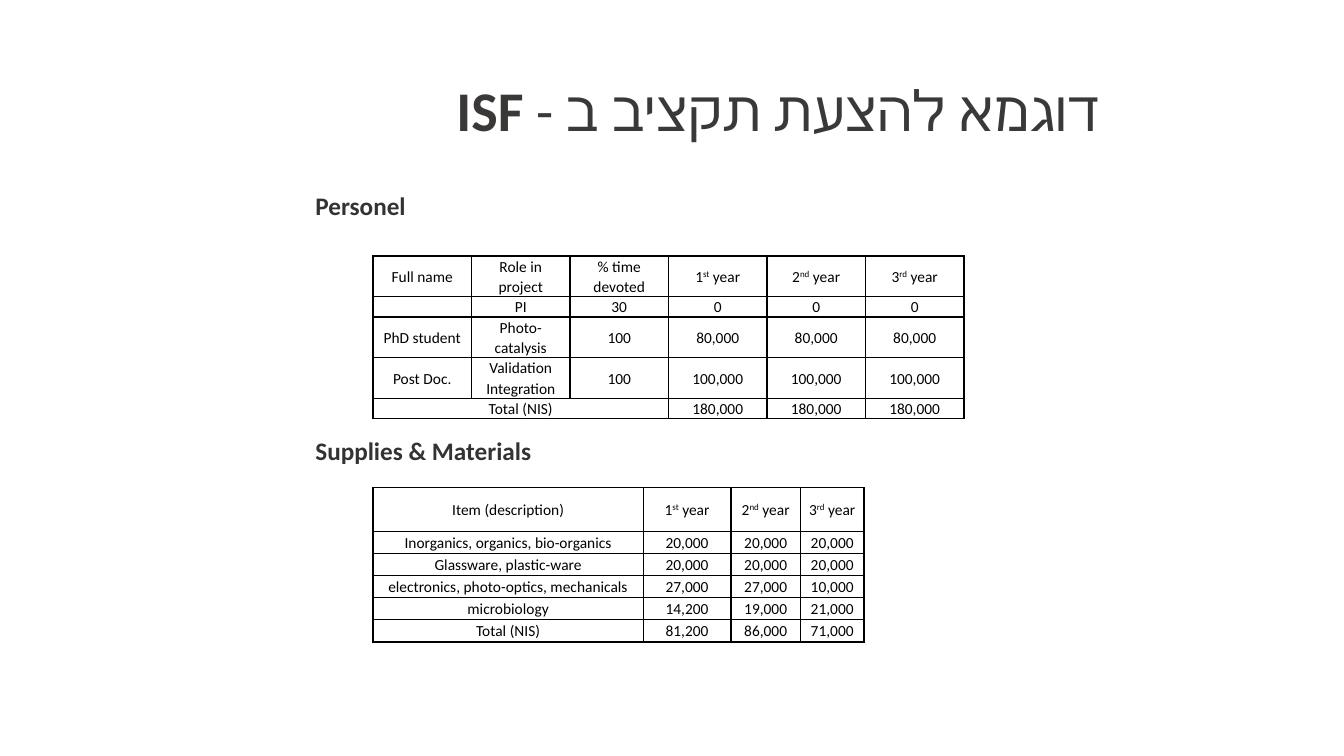
from lxml import etree
from pptx import Presentation
from pptx.dml.color import RGBColor
from pptx.enum.text import MSO_ANCHOR, MSO_AUTO_SIZE, PP_ALIGN
from pptx.oxml.ns import qn
from pptx.util import Inches, Pt

MIDDLE, TOP = MSO_ANCHOR.MIDDLE, MSO_ANCHOR.TOP
CENTER = PP_ALIGN.CENTER
FIT_SHAPE = MSO_AUTO_SIZE.SHAPE_TO_FIT_TEXT
FONT = "Calibri"
BLACK, HEADING_COLOR, TITLE_COLOR = "000000", "333333", "3B3838"

TITLE = ["דוגמא להצעת תקציב ב - ", "ISF"]
# Text between carets is superscript
YEARS = ["1^st^ year", "2^nd^ year", "3^rd^ year"]
PERSONNEL = [
    ["Full name", "Role in project", "% time devoted", *YEARS],
    ["", "PI", "30", "0", "0", "0"],
    ["PhD student", "Photo-catalysis", "100", "80,000", "80,000", "80,000"],
    ["Post Doc.", "Validation Integration", "100", "100,000", "100,000", "100,000"],
    ["Total (NIS)", "", "", "180,000", "180,000", "180,000"],
]
SUPPLIES = [
    ["Item (description)", *YEARS],
    ["Inorganics, organics, bio-organics", "20,000", "20,000", "20,000"],
    ["Glassware, plastic-ware", "20,000", "20,000", "20,000"],
    ["electronics, photo-optics, mechanicals", "27,000", "27,000", "10,000"],
    ["microbiology", "14,200", "19,000", "21,000"],
    ["Total (NIS)", "81,200", "86,000", "71,000"],
]
HEADINGS = [
    ("Personel", 1.84, 1.14, MIDDLE),
    ("Supplies & Materials", 4.27, 2.36, TOP),
]
HEADING_LEFT, TABLE_LEFT = 3.03, 3.7


def style(run, size, color, bold=False):
    run.font.name = FONT
    run.font.size = Pt(size)
    run.font.bold = bold
    run.font.color.rgb = RGBColor.from_string(color)


def add_borders(cell):
    properties = cell._tc.get_or_add_tcPr()
    for side in ("lnL", "lnR", "lnT", "lnB"):
        line = etree.SubElement(properties, qn(f"a:{side}"), w=str(Pt(1)))
        fill = etree.SubElement(line, qn("a:solidFill"))
        etree.SubElement(fill, qn("a:srgbClr"), val=BLACK)


def fill_cell(cell, text):
    add_borders(cell)
    cell.fill.background()
    cell.vertical_anchor = MIDDLE
    cell.margin_left = cell.margin_right = Inches(0.07)
    cell.margin_top = cell.margin_bottom = 0
    paragraph = cell.text_frame.paragraphs[0]
    paragraph.alignment = CENTER
    paragraph.line_spacing = 1.07
    if not text:
        # Keeps an empty cell as low as its row
        etree.SubElement(paragraph._p, qn("a:endParaRPr"), sz="1100")
        return
    for index, part in enumerate(text.split("^")):
        run = paragraph.add_run()
        run.text = part
        style(run, 11, BLACK)
        if index % 2:
            run._r.get_or_add_rPr().set("baseline", "30000")


def add_budget(slide, rows, top, widths, heights):
    frame = slide.shapes.add_table(
        len(rows), len(widths), Inches(TABLE_LEFT), Inches(top),
        Inches(sum(widths)), Inches(sum(heights)))
    table = frame.table
    table.first_row = table.horz_banding = False
    for column, width in zip(table.columns, widths):
        column.width = Inches(width)
    for row, height, texts in zip(table.rows, heights, rows):
        row.height = Inches(height)
        for cell, text in zip(row.cells, texts):
            fill_cell(cell, text)
    return table


def add_title(slide):
    title = slide.shapes.title
    title.left, title.top = Inches(3.03), Inches(0.4)
    title.width, title.height = Inches(9.39), Inches(1.45)
    title.text_frame.vertical_anchor = MIDDLE
    paragraph = title.text_frame.paragraphs[0]
    paragraph.alignment = CENTER
    paragraph.line_spacing = 0.9
    paragraph._p.get_or_add_pPr().set("rtl", "1")
    for text, bold in zip(TITLE, (False, True)):
        run = paragraph.add_run()
        run.text = text
        style(run, 40, TITLE_COLOR, bold)
        etree.SubElement(run._r.get_or_add_rPr(), qn("a:cs"), typeface=FONT)


def main():
    prs = Presentation()
    prs.slide_width, prs.slide_height = Inches(13.33), Inches(7.5)
    slide = prs.slides.add_slide(prs.slide_layouts[5])
    add_title(slide)

    personnel = add_budget(slide, PERSONNEL, 2.54, [0.977] * 6,
                           [0.39, 0.19, 0.39, 0.39, 0.19])
    personnel.cell(4, 0).merge(personnel.cell(4, 2))
    add_budget(slide, SUPPLIES, 4.84, [2.68, 0.87, 0.69, 0.63],
               [0.43] + [0.22] * 5)

    for text, top, width, anchor in HEADINGS:
        box = slide.shapes.add_textbox(Inches(HEADING_LEFT), Inches(top),
                                       Inches(width), Inches(0.4))
        frame = box.text_frame
        frame.word_wrap = False
        frame.auto_size = FIT_SHAPE
        frame.vertical_anchor = anchor
        frame.text = text
        style(frame.paragraphs[0].runs[0], 18, HEADING_COLOR, bold=True)

    prs.save("out.pptx")


if __name__ == "__main__":
    main()
